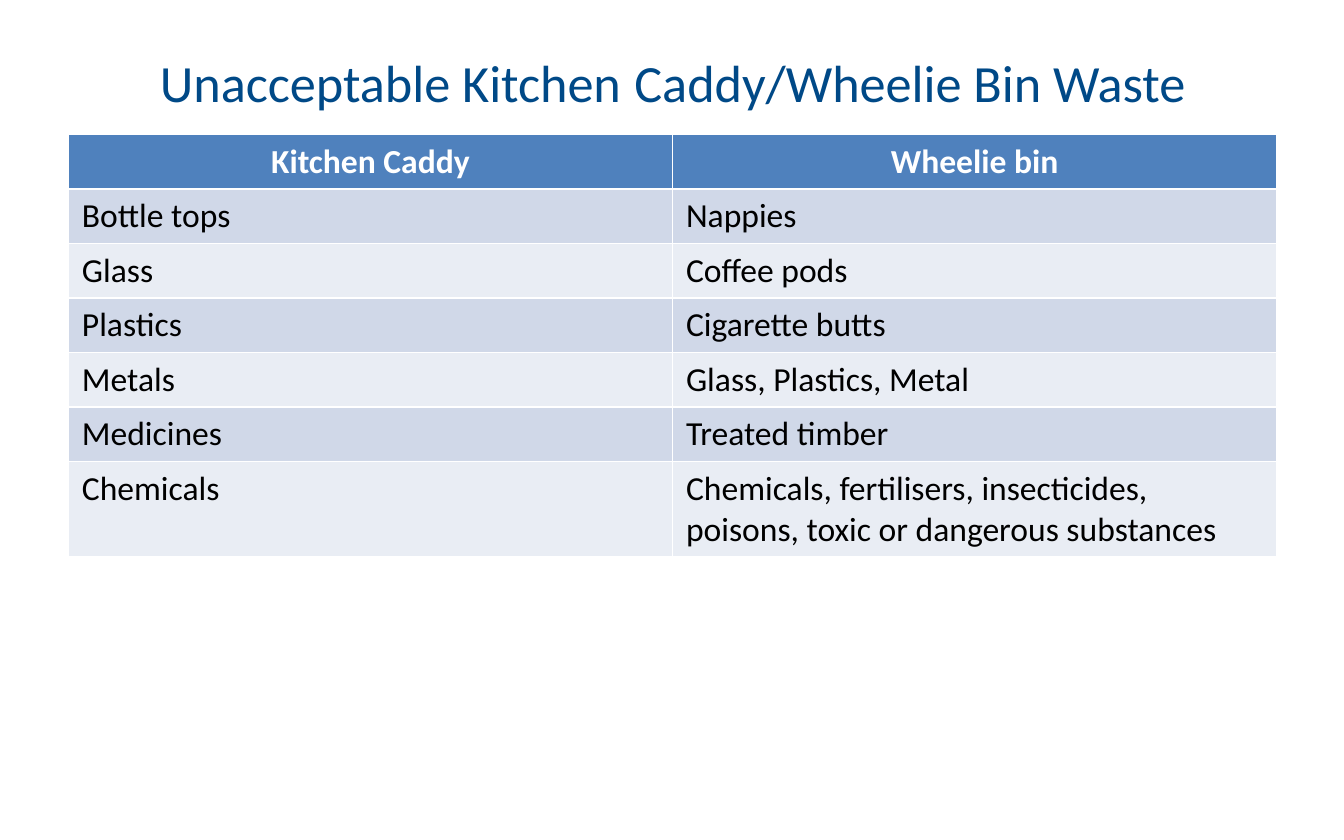
from dataclasses import dataclass

from pptx import Presentation
from pptx.dml.color import RGBColor
from pptx.enum.text import MSO_ANCHOR, MSO_AUTO_SIZE, PP_ALIGN
from pptx.util import Inches, Pt


@dataclass(frozen=True)
class Theme:
    font: str = "Calibri"
    title_color: RGBColor = RGBColor(0x00, 0x49, 0x87)
    header_fill: RGBColor = RGBColor(0x4F, 0x81, 0xBD)
    header_text: RGBColor = RGBColor(0xFF, 0xFF, 0xFF)
    body_text: RGBColor = RGBColor(0x00, 0x00, 0x00)
    bands: tuple = (RGBColor(0xD0, 0xD8, 0xE8), RGBColor(0xE9, 0xED, 0xF4))
    title_size: Pt = Pt(28)
    title_gap_size: Pt = Pt(32)
    table_size: Pt = Pt(18)


theme = Theme()
LEFT, WIDTH = Inches(0.51), Inches(8.99)
ROW_HEIGHT, LAST_ROW_HEIGHT = Inches(0.4), Inches(0.71)

WASTE = [
    ("Kitchen Caddy", "Wheelie bin"),
    ("Bottle tops", "Nappies"),
    ("Glass", "Coffee pods"),
    ("Plastics", "Cigarette butts"),
    ("Metals", "Glass, Plastics, Metal"),
    ("Medicines", "Treated timber"),
    ("Chemicals", "Chemicals, fertilisers, insecticides, poisons, "
                  "toxic or dangerous substances"),
]

deck = Presentation()
deck.slide_width, deck.slide_height = Inches(10), Inches(6.25)
page = deck.slides.add_slide(deck.slide_layouts[5])

# Title
title = page.shapes.title
title.left, title.top, title.width, title.height = LEFT, Inches(0.25), WIDTH, Inches(0.67)
frame = title.text_frame
frame.auto_size = MSO_AUTO_SIZE.NONE
frame.vertical_anchor = MSO_ANCHOR.MIDDLE
para = frame.paragraphs[0]
para.alignment = PP_ALIGN.CENTER
para.font.name = theme.font
para.font.color.rgb = theme.title_color
for text, size in [
    ("Unacceptable Kitchen", theme.title_size),
    (" ", theme.title_gap_size),
    ("Caddy/Wheelie Bin Waste", theme.title_size),
]:
    span = para.add_run()
    span.text = text
    span.font.size = size

# Waste table: the default table style supplies the white borders
table_height = ROW_HEIGHT * (len(WASTE) - 1) + LAST_ROW_HEIGHT
table = page.shapes.add_table(
    len(WASTE), len(WASTE[0]), LEFT, Inches(1), WIDTH, table_height
).table
for row in table.rows:
    row.height = ROW_HEIGHT
table.rows[len(WASTE) - 1].height = LAST_ROW_HEIGHT

for row_index, items in enumerate(WASTE):
    is_header = row_index == 0
    for column_index, item in enumerate(items):
        cell = table.cell(row_index, column_index)
        cell.text = item
        cell.fill.solid()
        cell.fill.fore_color.rgb = (
            theme.header_fill if is_header else theme.bands[(row_index - 1) % 2]
        )
        para = cell.text_frame.paragraphs[0]
        para.alignment = PP_ALIGN.CENTER if is_header else PP_ALIGN.LEFT
        para.font.name = theme.font
        para.font.size = theme.table_size
        para.font.bold = is_header
        para.font.color.rgb = theme.header_text if is_header else theme.body_text

deck.save("out.pptx")
